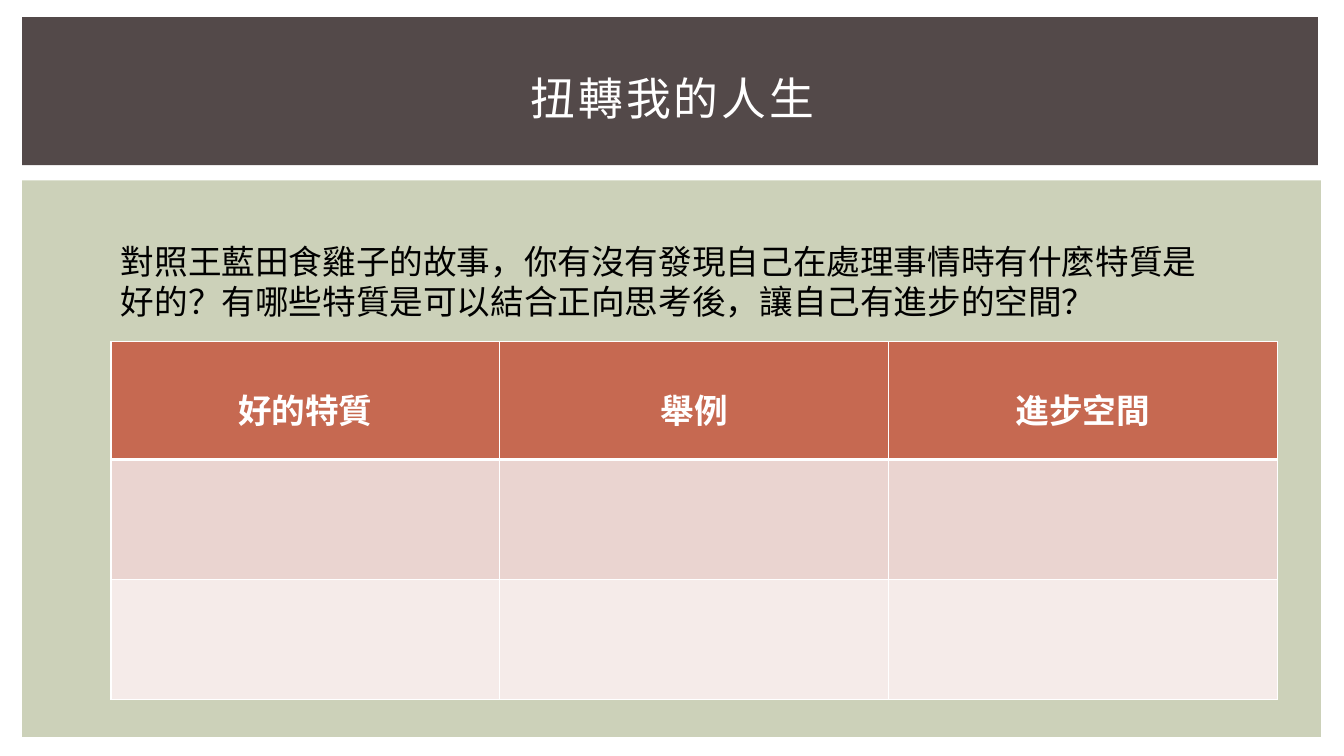
from lxml import etree
from pptx import Presentation, util as u
from pptx.dml.color import RGBColor
from pptx.enum import shapes, text
from pptx.oxml.ns import qn

COLORS = {"white": "FFFFFF", "black": "000000", "banner": "534949", "panel": "CCD1B9",
          "header": "C66951", "band_dark": "EAD4D0", "band_light": "F5EBE9"}
TRAITS = ["好的特質", "舉例", "進步空間"]
ROW_FILLS = ["header", "band_dark", "band_light"]
ROW_HEIGHTS = [1.17, 1.19, 1.19]


def write(frame, words, align, **font_values):
    paragraph = frame.paragraphs[0]
    paragraph.alignment = align
    run = paragraph.add_run()
    run.text = words
    color = font_values.pop("color")
    for key, value in font_values.items():
        setattr(run.font, key, value)
    run.font.color.rgb = RGBColor.from_string(COLORS[color])
    return run


def draw_border(cell, side, points):
    """Add a solid white line to one side (L, R, T or B) of a table cell."""
    line = etree.SubElement(cell._tc.get_or_add_tcPr(), qn(f"a:ln{side}"), w=str(u.Pt(points)))
    fill = etree.SubElement(line, qn("a:solidFill"))
    etree.SubElement(fill, qn("a:srgbClr"), val=COLORS["white"])


deck = Presentation()
deck.slide_width, deck.slide_height = u.Inches(13.33), u.Inches(7.5)
slide = deck.slides.add_slide(deck.slide_layouts[6])

# Background blocks
for color, box in {"panel": (0.22, 1.79, 12.88, 5.52), "banner": (0.22, 0.17, 12.85, 1.47)}.items():
    block = slide.shapes.add_shape(shapes.MSO_SHAPE.RECTANGLE, *map(u.Inches, box))
    block.shadow.inherit = False
    block.fill.solid()
    block.fill.fore_color.rgb = RGBColor.from_string(COLORS[color])
    block.line.fill.background()

# Title and question
title = slide.shapes.add_textbox(*map(u.Inches, (0.56, 0.39, 12.22, 1.15))).text_frame
title.word_wrap = True
title.vertical_anchor = text.MSO_ANCHOR.MIDDLE
heading = write(title, "扭轉我的人生", text.PP_ALIGN.CENTER,
                name="Cabin", size=u.Pt(32), color="white")
heading.font._element.set("spc", "200")

question = slide.shapes.add_textbox(*map(u.Inches, (1.1, 2.34, 11.11, 0.91))).text_frame
question.word_wrap = True
write(question, "對照王藍田食雞子的故事，你有沒有發現自己在處理事情時有什麼特質是好的？"
      "有哪些特質是可以結合正向思考後，讓自己有進步的空間？", text.PP_ALIGN.LEFT,
      name="Cabin", size=u.Pt(24), color="black")

# Worksheet table
worksheet = slide.shapes.add_table(
    len(ROW_FILLS), len(TRAITS),
    *map(u.Inches, (1.1, 3.39, 11.57, sum(ROW_HEIGHTS)))).table
for r, (color, height) in enumerate(zip(ROW_FILLS, ROW_HEIGHTS)):
    worksheet.rows[r].height = u.Inches(height)
    for c in range(len(TRAITS)):
        cell = worksheet.cell(r, c)
        for side in "LRTB":
            header_rule = (r, side) in ((0, "B"), (1, "T"))
            draw_border(cell, side, 3 if header_rule else 1)
        cell.fill.solid()
        cell.fill.fore_color.rgb = RGBColor.from_string(COLORS[color])

for c, trait in enumerate(TRAITS):
    cell = worksheet.cell(0, c)
    cell.vertical_anchor = text.MSO_ANCHOR.MIDDLE
    cell.margin_left = cell.margin_right = u.Inches(0.07)
    cell.margin_top, cell.margin_bottom = u.Inches(0.17), 0
    write(cell.text_frame, trait, text.PP_ALIGN.CENTER,
          name="Calibri", size=u.Pt(24), bold=True, color="white")

deck.save("out.pptx")
